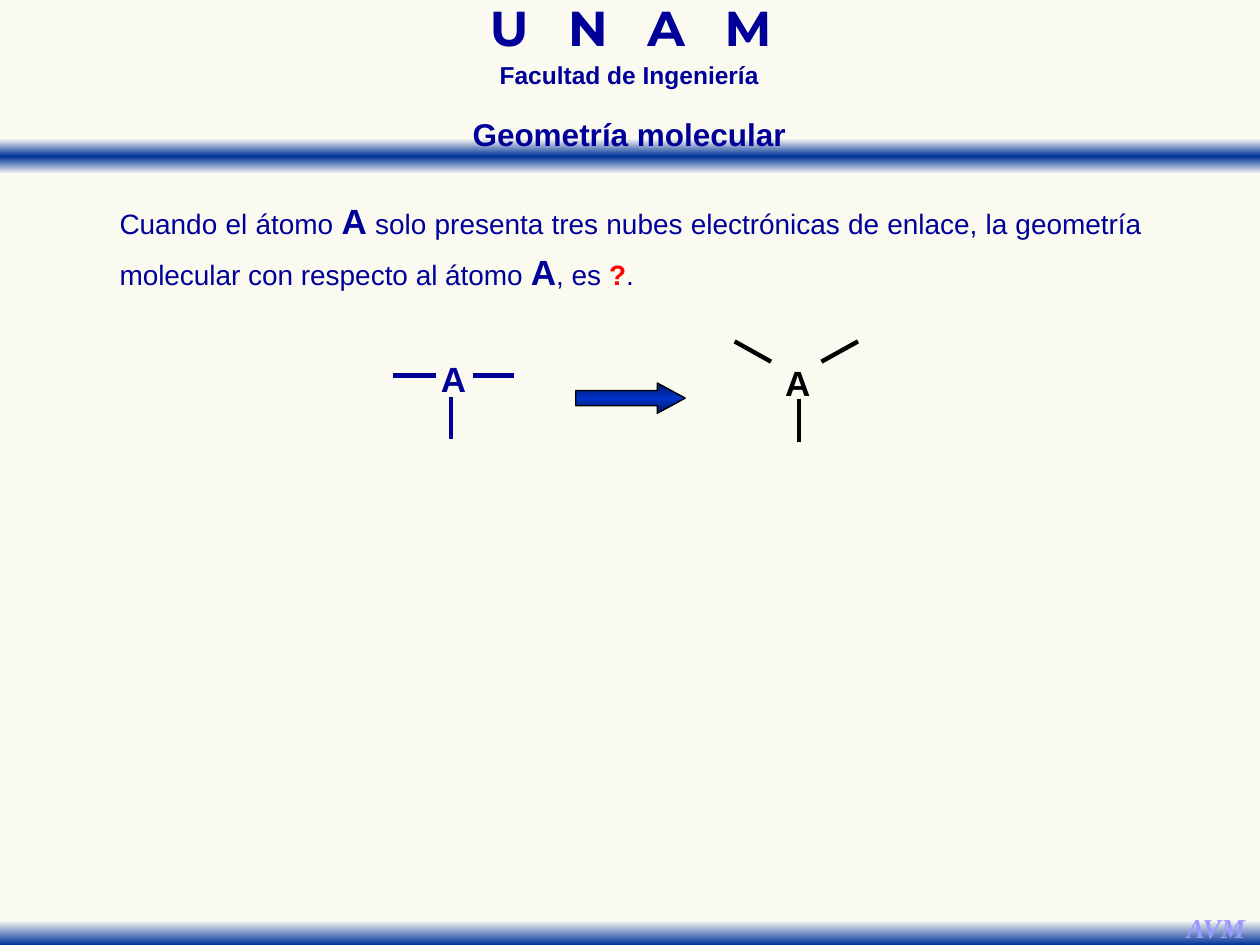
import pptx
import pptx.util
import pptx.dml.color
import pptx.enum.shapes
import pptx.enum.text
import pptx.oxml
import pptx.oxml.ns

Pt = pptx.util.Pt
RGB = pptx.dml.color.RGBColor.from_string
ALIGN = pptx.enum.text.PP_ALIGN
SHAPE = pptx.enum.shapes.MSO_SHAPE

THEME = {
    "paper": "FAFAF0", "fade": "FAFAF2", "band": "003399", "navy": "000099",
    "red": "FF0000", "black": "000000", "lilac": "9999FF",
    "arrow_edge": "00175C", "arrow_core": "0033CC",
    "font": "Arial", "logo_font": "Montserrat", "sign_font": "Times New Roman",
    "logo": 28, "title": 18, "faculty": 14, "body": 16, "atom": 20, "sign": 15.6,
}


def style(size, color="navy", font="font", **extra):
    return dict(size=Pt(THEME[size]), color=color, name=THEME[font], **extra)


# Content: boxes are left, top, width, height in points
BODY = style("body")
ATOM = style("atom", bold=True)
LOGO = style("logo", font="logo_font", bold=True)
TITLE = ((262, 62, 195.2, 28.8),
         [("Geometría molecular", style("title", bold=True))])
TEXTS = [  # box, alignment, line spacing, wrap, runs
    ((219.6, 4.3, 281.5, 31), ALIGN.CENTER, 0.7, True,
     [("U N A ", dict(LOGO, tracking=7.4)), ("M", LOGO)]),
    ((231.1, 35.3, 257, 19.4), ALIGN.CENTER, 0.7, True,
     [("Facultad de Ingeniería", style("faculty", bold=True))]),
    ((670.3, 517, 49, 26.6), ALIGN.CENTER, 1.0, False,
     [("AVM", style("sign", "lilac", "sign_font", bold=True, italic=True))]),
    ((61.2, 105.8, 598.3, 65.5), ALIGN.JUSTIFY, 1.2, True,
     [("Cuando el átomo ", BODY), ("A", ATOM),
      (" solo presenta tres nubes electrónicas de enlace, la geometría "
       "molecular con respecto al átomo ", BODY),
      ("A", ATOM), (", es ", BODY),
      ("?", style("body", "red", bold=True)), (".", BODY)]),
]
BANDS = [  # top, height, gradient stops
    (79.2, 20.2, [(0, "fade"), (50, "band"), (100, "fade")]),
    (520.5, 19.5, [(28, "fade"), (100, "band")]),
]
ARROW = ((329, 218.9, 62.6, 17.3),
         [(0, "arrow_edge"), (50, "arrow_core"), (100, "arrow_edge")])
MOLECULES = [  # atom corner, colour, bonds as offsets from that corner
    ((252, 204.3), "navy",
     [(18, 10.3, 41.8, 10.3), (-27.4, 10.3, -2.9, 10.3), (5.8, 22.5, 5.8, 46.3)]),
    ((448.6, 206.5), "black",
     [(20.8, 0.2, 41.7, -11.4), (7.9, 21.8, 7.9, 46.2), (-8, 0.2, -28.8, -11.4)]),
]
ATOM_SIZE = (14.4, 23.8)


def points(values):
    return [Pt(v) for v in values]


def write(shape, runs, align, spacing=1.0, wrap=False, margin=None):
    tf = shape.text_frame
    frame = dict(word_wrap=wrap, auto_size=pptx.enum.text.MSO_AUTO_SIZE.NONE,
                 vertical_anchor=pptx.enum.text.MSO_ANCHOR.TOP)
    if margin is not None:
        frame.update({f"margin_{side}": Pt(margin)
                      for side in ("left", "top", "right", "bottom")})
    for key, value in frame.items():
        setattr(tf, key, value)
    p = tf.paragraphs[0]
    p.alignment, p.line_spacing = align, spacing
    for text, look in runs:
        r = p.add_run()
        r.text = text
        for key, value in look.items():
            if key == "color":
                r.font.color.rgb = RGB(THEME[value])
            elif key == "tracking":
                r.font._element.set("spc", str(round(value * 100)))
            else:
                setattr(r.font, key, value)


def add_gradient_shape(shapes, kind, box, stops):
    sp = shapes.add_shape(kind, *points(box))
    sp.shadow.inherit = False
    sp.line.fill.background()
    sp.fill.gradient()
    grad = sp._element.spPr.find(pptx.oxml.ns.qn("a:gradFill"))
    marks = "".join(f'<a:gs pos="{pos * 1000}"><a:srgbClr val="{THEME[color]}"/></a:gs>'
                    for pos, color in stops)
    grad.replace(grad.gsLst, pptx.oxml.parse_xml(
        f'<a:gsLst {pptx.oxml.ns.nsdecls("a")}>{marks}</a:gsLst>'))
    sp.fill.gradient_angle = 270  # counter-clockwise: top to bottom
    return sp


def add_bond(shapes, ends, color):
    line = shapes.add_connector(pptx.enum.shapes.MSO_CONNECTOR.STRAIGHT, *points(ends))
    line.line.color.rgb = RGB(THEME[color])
    line.line.width = Pt(2.5)
    line._element.spPr.append(pptx.oxml.parse_xml(
        f'<a:effectLst {pptx.oxml.ns.nsdecls("a")}/>'))


def main():
    prs = pptx.Presentation()
    prs.slide_width, prs.slide_height = Pt(720), Pt(540)
    s = prs.slides.add_slide(prs.slide_layouts[5])
    s.background.fill.solid()
    s.background.fill.fore_color.rgb = RGB(THEME["paper"])

    # Header and footer bands
    for top, height, stops in BANDS:
        add_gradient_shape(s.shapes, SHAPE.RECTANGLE, (0, top, 720, height), stops)

    # Heading, signature and statement
    for box, align, spacing, wrap, runs in TEXTS:
        write(s.shapes.add_textbox(*points(box)), runs, align, spacing, wrap)

    # Molecules: central atom with three bonds
    for (x, y), color, bonds in MOLECULES:
        group = s.shapes.add_group_shape()
        atom = group.shapes.add_textbox(*points((x, y) + ATOM_SIZE))
        write(atom, [("A", dict(ATOM, color=color))], ALIGN.JUSTIFY, margin=0)
        for x1, y1, x2, y2 in bonds:
            add_bond(group.shapes, (x + x1, y + y1, x + x2, y + y2), color)

    # Arrow between the molecules
    box, stops = ARROW
    arrow = add_gradient_shape(s.shapes, SHAPE.RIGHT_ARROW, box, stops)
    arrow.adjustments[0], arrow.adjustments[1] = 0.5, 0.92
    arrow.line.color.rgb = RGB(THEME["black"])
    arrow.line.width = Pt(0.75)

    # Title, in front of the header band
    box, runs = TITLE
    title = s.shapes.title
    title.left, title.top, title.width, title.height = points(box)
    write(title, runs, ALIGN.CENTER)
    s.shapes._spTree.append(title._element)

    prs.save("out.pptx")


if __name__ == "__main__":
    main()
